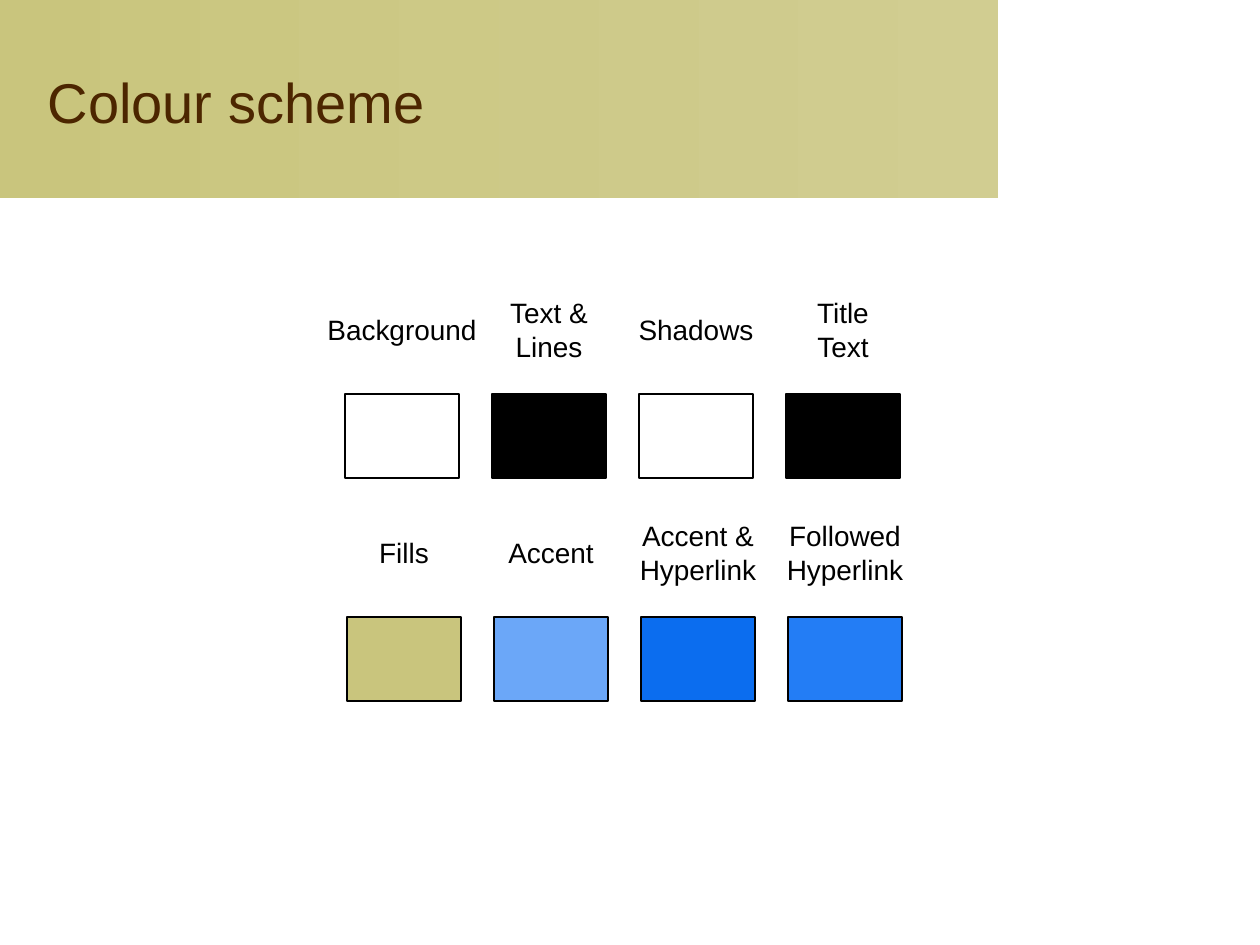
from pptx import Presentation
from pptx.dml.color import RGBColor
from pptx.enum.shapes import MSO_SHAPE
from pptx.enum.text import MSO_ANCHOR, MSO_AUTO_SIZE, PP_ALIGN
from pptx.util import Emu, Inches, Pt

PX = 914400 / 126
FONT = "Arial"
WHITE = RGBColor(0xFF, 0xFF, 0xFF)
BLACK = RGBColor(0x00, 0x00, 0x00)
BROWN = RGBColor(0x4C, 0x26, 0x00)
OLIVE = RGBColor(0xC9, 0xC5, 0x7D)
PALE_OLIVE = RGBColor(0xD1, 0xCD, 0x91)
SKY = RGBColor(0x6B, 0xA7, 0xF8)
BLUE = RGBColor(0x0B, 0x6D, 0xEF)
BRIGHT_BLUE = RGBColor(0x23, 0x7D, 0xF5)

SWATCH_W, SWATCH_H, PITCH = 114, 84, 147
LABEL_RISE = 64  # from the middle of a label down to its swatch

# Each row: left, top, then label paragraphs, label width and swatch colour
ROWS = [
    (345, 394, [
        (["Background"], 178, WHITE),
        (["Text &", "Lines"], 108, BLACK),
        (["Shadows"], 144, WHITE),
        (["Title\nText"], 82, BLACK),
    ]),
    (347, 617, [
        (["Fills"], 80, OLIVE),
        (["Accent"], 114, SKY),
        (["Accent &", "Hyperlink"], 148, BLUE),
        (["Followed", "Hyperlink"], 148, BRIGHT_BLUE),
    ]),
]


def px(*lengths):
    return [Emu(round(length * PX)) for length in lengths]


class SlideBuilder:
    def __init__(self, slide):
        self.slide = slide

    def style(self, run, size, color):
        run.font.name = FONT
        run.font.size = Pt(size)
        run.font.color.rgb = color

    def band(self, x, y, w, h):
        band = self.slide.shapes.add_shape(MSO_SHAPE.RECTANGLE, *px(x, y, w, h))
        band.shadow.inherit = False
        band.line.fill.background()
        band.fill.gradient()
        band.fill.gradient_angle = 0
        for stop, color in zip(band.fill.gradient_stops, (OLIVE, PALE_OLIVE)):
            stop.color.rgb = color
        # Send behind the title
        self.slide.shapes._spTree.insert(2, band._element)

    def title(self, text, x, y, w, h):
        title = self.slide.shapes.title
        title.left, title.top, title.width, title.height = px(x, y, w, h)
        frame = title.text_frame
        frame.vertical_anchor = MSO_ANCHOR.MIDDLE
        frame.paragraphs[0].alignment = PP_ALIGN.LEFT
        run = frame.paragraphs[0].add_run()
        run.text = text
        self.style(run, 32, BROWN)

    def swatch(self, x, y, color):
        swatch = self.slide.shapes.add_shape(
            MSO_SHAPE.RECTANGLE, *px(x, y, SWATCH_W, SWATCH_H))
        swatch.shadow.inherit = False
        swatch.fill.solid()
        swatch.fill.fore_color.rgb = color
        swatch.line.color.rgb = BLACK
        swatch.line.width = Pt(0.75)

    def label(self, paragraphs, center, middle, w):
        line_count = len("\n".join(paragraphs).split("\n"))
        h = 13 + 34 * line_count
        box = self.slide.shapes.add_textbox(
            *px(center - w / 2, middle - h / 2, w, h))
        frame = box.text_frame
        frame.word_wrap = False
        frame.auto_size = MSO_AUTO_SIZE.SHAPE_TO_FIT_TEXT
        for i, text in enumerate(paragraphs):
            paragraph = frame.add_paragraph() if i else frame.paragraphs[0]
            paragraph.alignment = PP_ALIGN.CENTER
            for j, line in enumerate(text.split("\n")):
                if j:
                    paragraph.add_line_break()
                run = paragraph.add_run()
                run.text = line
                self.style(run, 16, BLACK)


def main():
    deck = Presentation()
    deck.slide_width, deck.slide_height = Inches(10), Inches(7.5)
    builder = SlideBuilder(deck.slides.add_slide(deck.slide_layouts[5]))

    # Heading
    builder.band(0, 0, 998, 198)
    builder.title("Colour scheme", 35, 38, 942, 127)

    # Labelled swatches
    for left, top, entries in ROWS:
        for column, (paragraphs, width, color) in enumerate(entries):
            x = left + column * PITCH
            builder.swatch(x, top, color)
            builder.label(paragraphs, x + SWATCH_W / 2, top - LABEL_RISE, width)

    deck.save("out.pptx")


if __name__ == "__main__":
    main()
